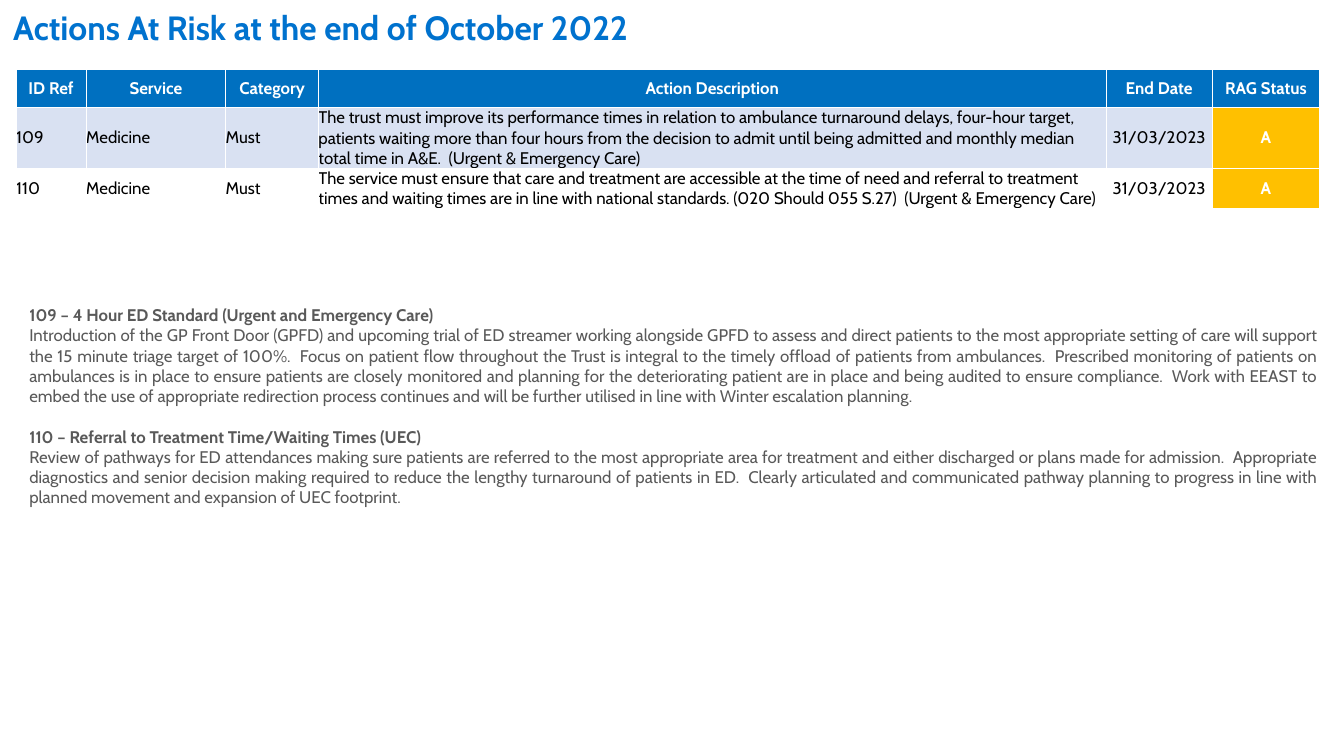
from lxml.etree import SubElement
from pptx import Presentation
from pptx.dml.color import RGBColor
from pptx.enum.text import MSO_ANCHOR, MSO_AUTO_SIZE, PP_ALIGN
from pptx.oxml.ns import qn
from pptx.util import Inches, Pt

TITLE_BLUE = RGBColor(0x00, 0x72, 0xCE)
HEADER_BLUE = RGBColor(0x00, 0x70, 0xC0)
ROW_TINT = RGBColor(0xD9, 0xE1, 0xF2)
AMBER = RGBColor(0xFF, 0xC0, 0x00)
GREY = RGBColor(0x59, 0x59, 0x59)
WHITE = RGBColor(0xFF, 0xFF, 0xFF)
BLACK = RGBColor(0x00, 0x00, 0x00)

COLUMNS = [("ID Ref", 0.52), ("Service", 1.04), ("Category", 0.69),
           ("Action Description", 5.86), ("End Date", 0.79), ("RAG Status", 0.8)]
ROW_HEIGHTS = [0.28, 0.4, 0.27]
ACTIONS = [
    ["109", "Medicine", "Must",
     "The trust must improve its performance times in relation to ambulance turnaround "
     "delays, four-hour target, patients waiting more than four hours from the decision "
     "to admit until being admitted and monthly median total time in A&E.  "
     "(Urgent & Emergency Care)",
     "31/03/2023", "A"],
    ["110", "Medicine", "Must",
     "The service must ensure that care and treatment are accessible at the time of need "
     "and referral to treatment times and waiting times are in line with national "
     "standards. (020 Should 055 S.27)  (Urgent & Emergency Care)",
     "31/03/2023", "A"],
]
UPDATES = [
    ("109 – 4 Hour ED Standard (Urgent and Emergency Care)",
     "Introduction of the GP Front Door (GPFD) and upcoming trial of ED streamer working "
     "alongside GPFD to assess and direct patients to the most appropriate setting of care "
     "will support the 15 minute triage target of 100%.  Focus on patient flow throughout "
     "the Trust is integral to the timely offload of patients from ambulances.  Prescribed "
     "monitoring of patients on ambulances is in place to ensure patients are closely "
     "monitored and planning for the deteriorating patient are in place and being audited "
     "to ensure compliance.  Work with EEAST to embed the use of appropriate redirection "
     "process continues and will be further utilised in line with Winter escalation "
     "planning."),
    ("110 – Referral to Treatment Time/Waiting Times (UEC)",
     "Review of pathways for ED attendances making sure patients are referred to the most "
     "appropriate area for treatment and either discharged or plans made for admission.  "
     "Appropriate diagnostics and senior decision making required to reduce the lengthy "
     "turnaround of patients in ED.  Clearly articulated and communicated pathway planning "
     "to progress in line with planned movement and expansion of UEC footprint."),
]


class ReportSlide:
    font_name = "Cabin"
    body_size = 9

    def __init__(self, slide):
        self.slide = slide

    def style(self, paragraph, color, size=body_size, bold=False, align=PP_ALIGN.LEFT):
        paragraph.alignment = align
        font = paragraph.font
        font.name, font.size, font.bold = self.font_name, Pt(size), bold
        font.color.rgb = color

    def text_frame(self, left, top, width, height):
        box = self.slide.shapes.add_textbox(
            Inches(left), Inches(top), Inches(width), Inches(height))
        box.text_frame.word_wrap = True
        return box.text_frame

    def title(self, text):
        paragraph = self.text_frame(0, 0, 9.75, 0.5).paragraphs[0]
        paragraph.text = text
        self.style(paragraph, TITLE_BLUE, size=18, bold=True)

    def updates(self, entries):
        frame = self.text_frame(0.12, 2.22, 9.77, 2.56)
        frame.auto_size = MSO_AUTO_SIZE.SHAPE_TO_FIT_TEXT
        for number, (heading, body) in enumerate(entries):
            heading_line = frame.add_paragraph() if number else frame.paragraphs[0]
            if number:
                heading_line.space_before = Pt(11)
            body_text = frame.add_paragraph()
            for paragraph, text in ((heading_line, heading), (body_text, body)):
                paragraph.text = text
                self.style(paragraph, GREY, bold=paragraph is heading_line,
                           align=PP_ALIGN.JUSTIFY)

    def cell(self, cell, text, fill, color, bold, align):
        cell.margin_left = cell.margin_right = cell.margin_top = cell.margin_bottom = 0
        cell.vertical_anchor = MSO_ANCHOR.MIDDLE
        paragraph = cell.text_frame.paragraphs[0]
        paragraph.text = text
        self.style(paragraph, color, bold=bold, align=align)
        # Borders come before the fill in the cell properties
        properties = cell._tc.get_or_add_tcPr()
        for side in ("a:lnL", "a:lnR", "a:lnT", "a:lnB"):
            line = SubElement(properties, qn(side), w=str(Pt(0.5)))
            solid = SubElement(line, qn("a:solidFill"))
            SubElement(solid, qn("a:srgbClr"), val=str(WHITE))
        if fill is None:
            cell.fill.background()
        else:
            cell.fill.solid()
            cell.fill.fore_color.rgb = fill

    def actions(self, columns, actions, row_heights):
        widths = [width for _, width in columns]
        table = self.slide.shapes.add_table(
            len(row_heights), len(columns), Inches(0.12), Inches(0.52),
            Inches(sum(widths)), Inches(sum(row_heights))).table
        table.horz_banding = False
        for column, width in zip(table.columns, widths):
            column.width = Inches(width)
        for row, height in zip(table.rows, row_heights):
            row.height = Inches(height)

        # Header row
        for index, (name, _) in enumerate(columns):
            self.cell(table.cell(0, index), name, HEADER_BLUE, WHITE, True,
                      PP_ALIGN.CENTER)

        # Action rows: tinted alternately, with the status in amber
        for row, action in enumerate(actions, start=1):
            for index, text in enumerate(action):
                is_status = columns[index][0] == "RAG Status"
                centred = columns[index][0] in ("End Date", "RAG Status")
                row_fill = ROW_TINT if row % 2 else None
                self.cell(table.cell(row, index), text,
                          AMBER if is_status else row_fill,
                          WHITE if is_status else BLACK, is_status,
                          PP_ALIGN.CENTER if centred else PP_ALIGN.LEFT)


def main():
    presentation = Presentation()
    # Widescreen, 16:9
    presentation.slide_width = Inches(10)
    presentation.slide_height = Inches(10 * 9 / 16)
    blank = presentation.slide_layouts[6]
    report = ReportSlide(presentation.slides.add_slide(blank))

    report.title("Actions At Risk at the end of October 2022")
    report.updates(UPDATES)
    report.actions(COLUMNS, ACTIONS, ROW_HEIGHTS)

    presentation.save("out.pptx")


if __name__ == "__main__":
    main()
